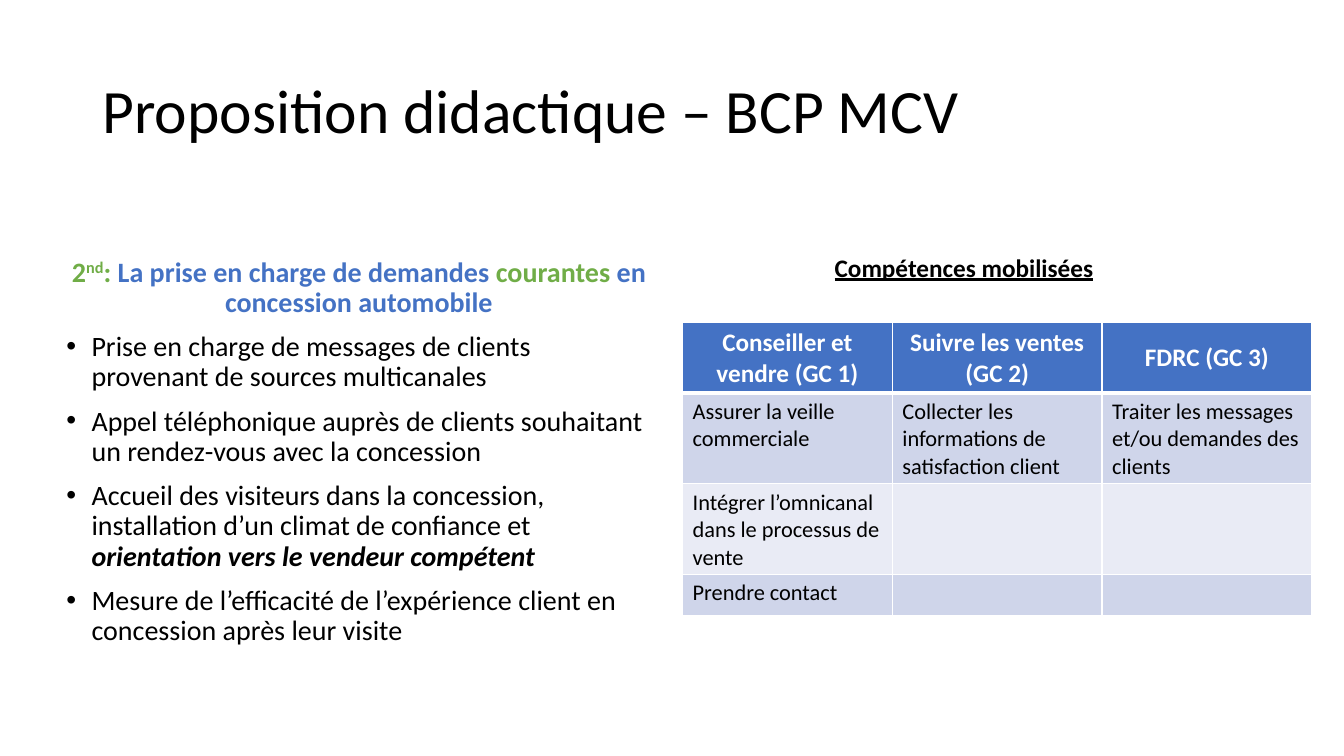
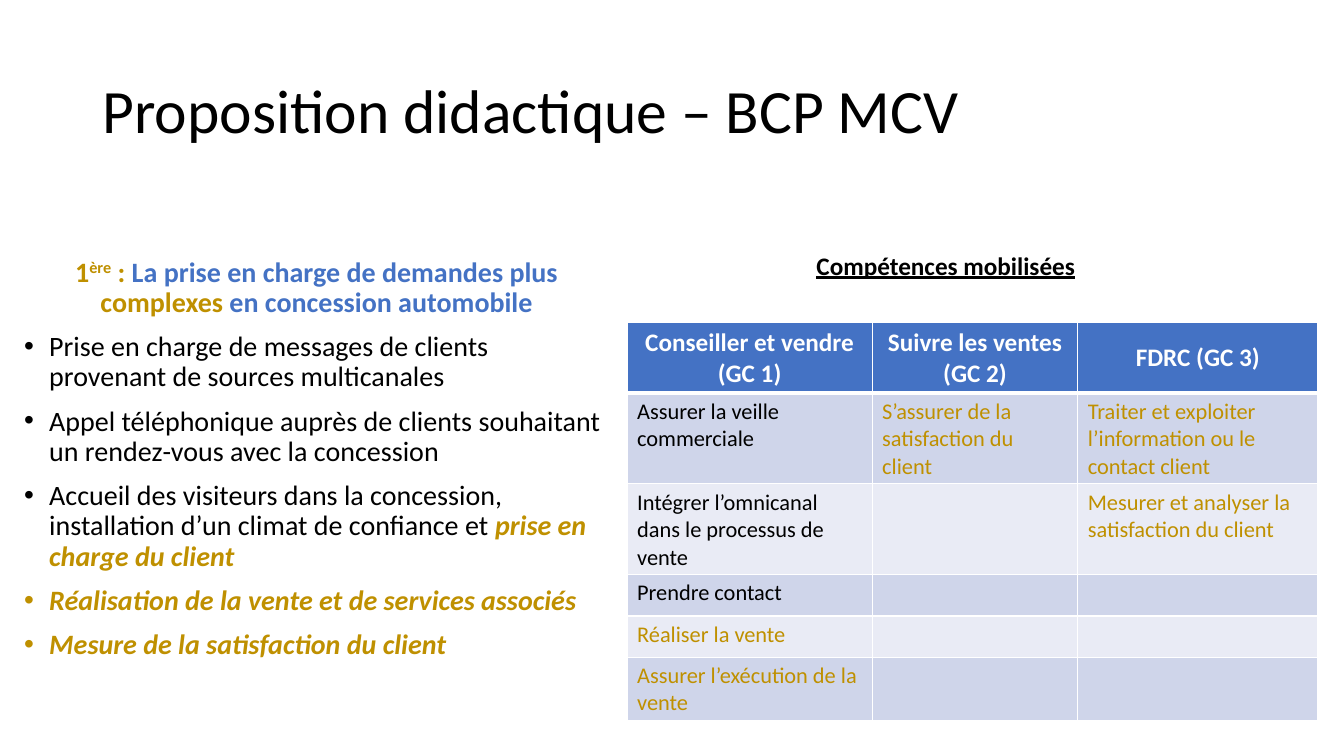
from collections import namedtuple

from lxml.etree import SubElement
from pptx import Presentation
from pptx.dml.color import RGBColor
from pptx.enum.text import MSO_ANCHOR as Anchor, PP_ALIGN as Align
from pptx.oxml.ns import qn
from pptx.util import Inches, Pt

BLACK = RGBColor(0, 0, 0)
WHITE = RGBColor(255, 255, 255)
BLUE = RGBColor(0x44, 0x72, 0xC4)
GREEN = RGBColor(0x70, 0xAD, 0x47)
GOLD = RGBColor(0xBF, 0x90, 0x00)
BANDS = RGBColor(0xCF, 0xD5, 0xEA), RGBColor(0xE9, 0xEB, 0xF5)
FONT = "Calibri"
TITLE = "Proposition didactique – BCP MCV"
LABEL = "Compétences mobilisées"
HEADS = "Conseiller et vendre (GC 1)", "Suivre les ventes (GC 2)", "FDRC (GC 3)"
ROW = 0.41

# Marks: b bold, i italic, u underlined, ^ superscript
Span = namedtuple("Span", "text color marks", defaults=(BLACK, ""))


def write(par, spans, size):
    for span in spans:
        run = par.add_run()
        run.text = span.text
        font = run.font
        font.name, font.size = FONT, Pt(size)
        font.color.rgb = span.color
        font.bold = "b" in span.marks
        font.italic = "i" in span.marks
        font.underline = "u" in span.marks
        if "^" in span.marks:
            run._r.get_or_add_rPr().set("baseline", "30000")


def add_box(slide, box, anchor=Anchor.TOP):
    frame = slide.shapes.add_textbox(*map(Inches, box)).text_frame
    frame.word_wrap = True
    frame.vertical_anchor = anchor
    return frame


def add_line(slide, box, span, size, anchor=Anchor.TOP):
    par = add_box(slide, box, anchor).paragraphs[0]
    write(par, [span], size)
    return par


def set_bullet(par):
    props = par._p.get_or_add_pPr()
    props.set("marL", str(Inches(0.25)))
    props.set("indent", str(-Inches(0.25)))
    SubElement(props, qn("a:buFont"), typeface="Arial")
    SubElement(props, qn("a:buChar"), char="•")


def add_body(slide, box, head, items):
    """Centred heading followed by bulleted items."""
    frame = add_box(slide, box)
    for i, spans in enumerate([head] + items):
        par = frame.add_paragraph() if i else frame.paragraphs[0]
        par.line_spacing = 0.9
        par.space_before = Pt(10)
        if i:
            set_bullet(par)
        else:
            par.alignment = Align.CENTER
        write(par, spans, 20)


def set_edges(cell, top, bottom):
    """White borders; they must precede the fill."""
    props = cell._tc.get_or_add_tcPr()
    edges = ("L", 1), ("R", 1), ("T", top), ("B", bottom)
    for i, (side, width) in enumerate(edges):
        line = SubElement(props, qn("a:ln" + side), w=str(Pt(width)))
        fill = SubElement(line, qn("a:solidFill"))
        SubElement(fill, qn("a:srgbClr"), val=str(WHITE))
        props.insert(i, line)


def add_grid(slide, left, top, widths, rows):
    heads = [Span(text, WHITE, "b") for text in HEADS]
    grid = [heads] + rows
    table = slide.shapes.add_table(
        len(grid), len(widths), Inches(left), Inches(top),
        Inches(sum(widths)), Inches(ROW * len(grid))).table
    for col, width in zip(table.columns, widths):
        col.width = Inches(width)
    for r, row in enumerate(grid):
        for c in range(len(widths)):
            cell = table.cell(r, c)
            cell.fill.solid()
            cell.fill.fore_color.rgb = BANDS[(r - 1) % 2] if r else BLUE
            set_edges(cell, 3 if r == 1 else 1, 1 if r else 3)
            par = cell.text_frame.paragraphs[0]
            if not r:
                cell.vertical_anchor = Anchor.MIDDLE
                par.alignment = Align.CENTER
            if c < len(row) and row[c]:
                write(par, [row[c]], 16 if r else 18)


def add_level(deck, left, head, items, label, grid, widths, rows):
    """One class level: lesson steps beside the skills they call on."""
    slide = deck.slides.add_slide(deck.slide_layouts[6])
    title = add_line(slide, (0.92, 0.4, 11.5, 1.45), Span(TITLE), 44,
                     Anchor.MIDDLE)
    title.line_spacing = 0.9
    add_body(slide, (left, 2.51, 6, 4.82), head, items)
    add_grid(slide, grid, 3.2, widths, rows)
    add_line(slide, (*label, 3.3, 0.4), Span(LABEL, BLACK, "bu"), 18)


STEPS = [
    [Span("Prise en charge de messages de clients provenant de sources "
          "multicanales")],
    [Span("Appel téléphonique auprès de clients souhaitant un rendez-vous "
          "avec la concession")],
]
WELCOME = Span("Accueil des visiteurs dans la concession, installation "
               "d’un climat de confiance et ")
WATCH = Span("Assurer la veille commerciale")
OMNI = Span("Intégrer l’omnicanal dans le processus de vente")
CONTACT = Span("Prendre contact")


def main():
    deck = Presentation()
    deck.slide_width, deck.slide_height = Inches(13.33), Inches(7.5)
    add_level(
        deck, 0.56,
        [Span("2", GREEN, "b"), Span("nd", GREEN, "b^"),
         Span(": ", GREEN, "b"),
         Span("La prise en charge de demandes ", BLUE, "b"),
         Span("courantes", GREEN, "b"),
         Span(" en concession automobile", BLUE, "b")],
        STEPS + [
            [WELCOME,
             Span("orientation vers le vendeur compétent", BLACK, "bi")],
            [Span("Mesure de l’efficacité de l’expérience client en "
                  "concession après leur visite")]],
        (8.18, 2.45), 6.77, [2.08] * 3,
        [[WATCH, Span("Collecter les informations de satisfaction client"),
          Span("Traiter les messages et/ou demandes des clients")],
         [OMNI], [CONTACT]])
    add_level(
        deck, 0.14,
        [Span("1", GOLD, "b"), Span("ère", GOLD, "b^"),
         Span(" : ", GOLD, "b"),
         Span("La prise en charge de demandes plus ", BLUE, "b"),
         Span("complexes ", GOLD, "b"),
         Span("en concession automobile", BLUE, "b")],
        STEPS + [
            [WELCOME, Span("prise en charge du client", GOLD, "bi")],
            [Span("Réalisation de la vente et de services associés",
                  GOLD, "bi")],
            [Span("Mesure de la satisfaction du client", GOLD, "bi")]],
        (8, 2.43), 6.22, [2.43, 2.04, 2.38],
        [[WATCH, Span("S’assurer de la satisfaction du client", GOLD),
          Span("Traiter et exploiter l’information ou le contact client",
               GOLD)],
         [OMNI, None,
          Span("Mesurer et analyser la satisfaction du client", GOLD)],
         [CONTACT],
         [Span("Réaliser la vente", GOLD)],
         [Span("Assurer l’exécution de la vente", GOLD)]])
    deck.save("out.pptx")


if __name__ == "__main__":
    main()
